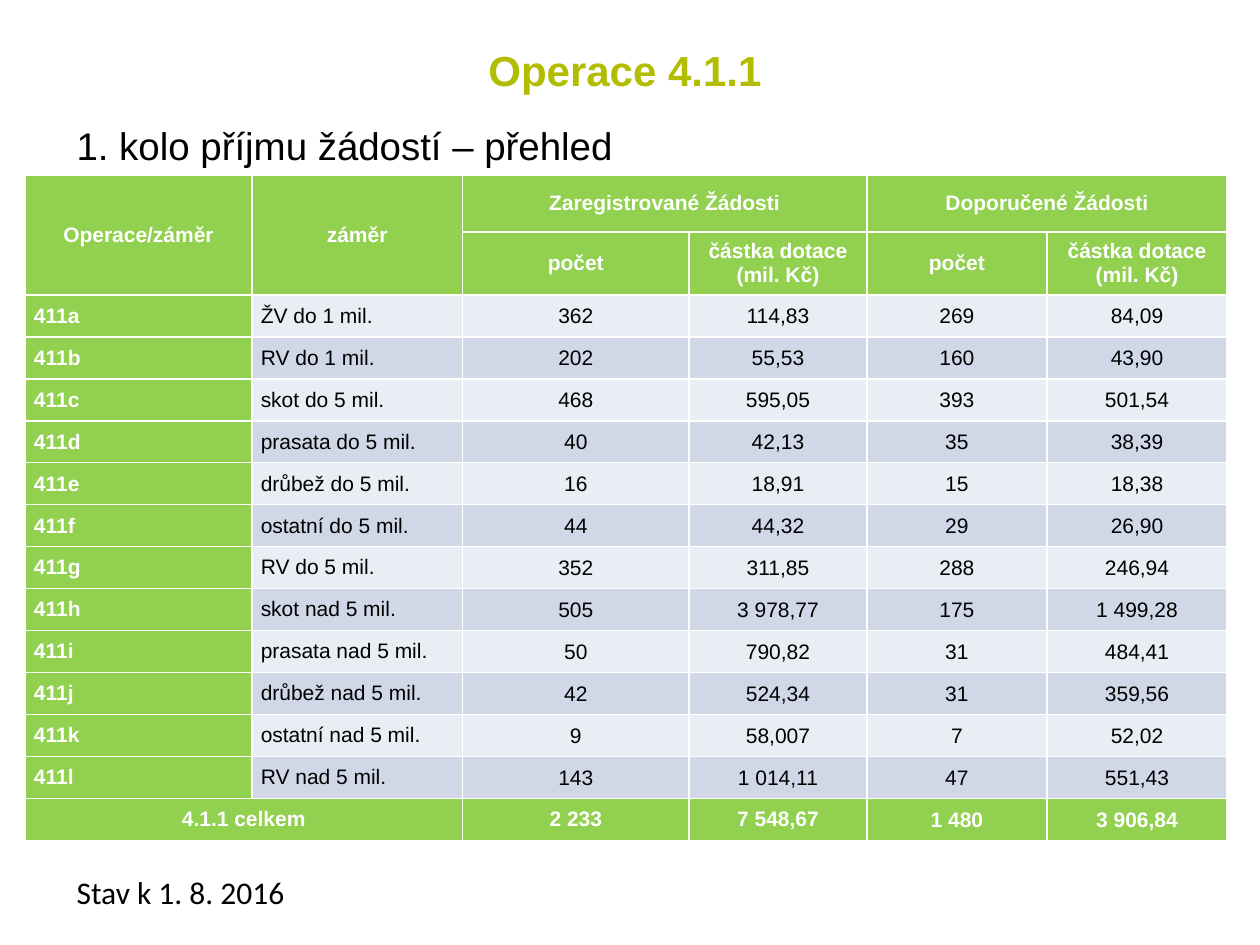
"""Build the slide with the overview of applications for operation 4.1.1."""
from lxml import etree
from pptx import Presentation
from pptx.dml.color import RGBColor
from pptx.enum.text import MSO_ANCHOR, PP_ALIGN
from pptx.oxml.ns import qn
from pptx.util import Inches, Pt

LEFT, CENTER = PP_ALIGN.LEFT, PP_ALIGN.CENTER
TOP, MIDDLE = MSO_ANCHOR.TOP, MSO_ANCHOR.MIDDLE
OLIVE = RGBColor(0xB2, 0xBC, 0x00)
GREEN = RGBColor(0x92, 0xD0, 0x50)
LIGHT = RGBColor(0xE9, 0xED, 0xF4)
DARK = RGBColor(0xD0, 0xD8, 0xE8)
WHITE = RGBColor(0xFF, 0xFF, 0xFF)
BLACK = RGBColor(0x00, 0x00, 0x00)

COLUMN_WIDTHS = [1.8, 1.67, 1.8, 1.41, 1.43, 1.43]
HEADER_HEIGHTS = [0.45, 0.5]
ROW_HEIGHT = 1 / 3
SUBHEADS = ["počet", "částka dotace (mil. Kč)"]
ROWS = [
    ["Operace/záměr", "záměr", "Zaregistrované Žádosti", "", "Doporučené Žádosti", ""],
    ["", "", *SUBHEADS, *SUBHEADS],
    ["411a", "ŽV do 1 mil.", "362", "114,83", "269", "84,09"],
    ["411b", "RV do 1 mil.", "202", "55,53", "160", "43,90"],
    ["411c", "skot do 5 mil.", "468", "595,05", "393", "501,54"],
    ["411d", "prasata do 5 mil.", "40", "42,13", "35", "38,39"],
    ["411e", "drůbež do 5 mil.", "16", "18,91", "15", "18,38"],
    ["411f", "ostatní do 5 mil.", "44", "44,32", "29", "26,90"],
    ["411g", "RV do 5 mil.", "352", "311,85", "288", "246,94"],
    ["411h", "skot nad 5 mil.", "505", "3 978,77", "175", "1 499,28"],
    ["411i", "prasata nad 5 mil.", "50", "790,82", "31", "484,41"],
    ["411j", "drůbež nad 5 mil.", "42", "524,34", "31", "359,56"],
    ["411k", "ostatní nad 5 mil.", "9", "58,007", "7", "52,02"],
    ["411l", "RV nad 5 mil.", "143", "1 014,11", "47", "551,43"],
    ["4.1.1 celkem", "", "2 233", "7 548,67", "1 480", "3 906,84"],
]
MERGES = [(0, 0, 1, 0), (0, 1, 1, 1), (0, 2, 0, 3), (0, 4, 0, 5), (14, 0, 14, 1)]


def write(frame, text, size=12, font="Arial", color=BLACK, bold=False,
          align=LEFT, anchor=MIDDLE, spacing=None):
    frame.word_wrap = True
    frame.vertical_anchor = anchor
    paragraph = frame.paragraphs[0]
    paragraph.alignment = align
    paragraph.line_spacing = spacing
    run = paragraph.add_run()
    run.text = text
    run.font.size = Pt(size)
    run.font.name = font
    run.font.bold = bold
    run.font.color.rgb = color


def add_white_borders(cell):
    properties = cell._tc.get_or_add_tcPr()
    for side in ("a:lnL", "a:lnR", "a:lnT", "a:lnB"):
        border = etree.SubElement(properties, qn(side), w=str(Pt(1)))
        fill = etree.SubElement(border, qn("a:solidFill"))
        etree.SubElement(fill, qn("a:srgbClr"), val=str(WHITE))


prs = Presentation()
prs.slide_width, prs.slide_height = Inches(10), Inches(7.5)
slide = prs.slides.add_slide(prs.slide_layouts[5])

title = slide.shapes.title
title.left, title.top = Inches(0.75), Inches(0.13)
title.width, title.height = Inches(8.42), Inches(0.85)
write(title.text_frame, "Operace 4.1.1", size=24, color=OLIVE, bold=True, align=CENTER)

subtitle = slide.shapes.add_textbox(Inches(0.51), Inches(0.92), Inches(8.9), Inches(0.55))
write(subtitle.text_frame, "1. kolo příjmu žádostí – přehled", size=22, anchor=TOP)

status = slide.shapes.add_textbox(Inches(0.51), Inches(6.88), Inches(8.9), Inches(0.4))
write(status.text_frame, "Stav k 1. 8. 2016", size=18, font="Calibri", anchor=TOP)

heights = HEADER_HEIGHTS + [ROW_HEIGHT] * (len(ROWS) - len(HEADER_HEIGHTS))
overview = slide.shapes.add_table(
    len(ROWS), len(COLUMN_WIDTHS), Inches(0.2), Inches(1.39),
    Inches(sum(COLUMN_WIDTHS)), Inches(sum(heights))).table
overview.horz_banding = False
for column, width in zip(overview.columns, COLUMN_WIDTHS):
    column.width = Inches(width)
for row, height in zip(overview.rows, heights):
    row.height = Inches(height)
for top, left, bottom, right in MERGES:
    overview.cell(top, left).merge(overview.cell(bottom, right))

for r, values in enumerate(ROWS):
    is_data = len(HEADER_HEIGHTS) <= r < len(ROWS) - 1
    for c, value in enumerate(values):
        cell = overview.cell(r, c)
        is_green = not is_data or c == 0
        is_tight = r >= len(HEADER_HEIGHTS) and c >= 4
        add_white_borders(cell)
        cell.fill.solid()
        cell.fill.fore_color.rgb = GREEN if is_green else (LIGHT, DARK)[r % 2]
        cell.margin_left = cell.margin_right = Inches(0.01 if is_tight else 0.07)
        cell.margin_top = Inches(0.01 if is_tight else 0)
        cell.margin_bottom = 0
        cell.vertical_anchor = MIDDLE
        if value:
            write(cell.text_frame, value, color=WHITE if is_green else BLACK,
                  bold=is_green, align=LEFT if is_data and c < 2 else CENTER,
                  spacing=1.06 if is_data and c in (2, 3) else None)

prs.save("out.pptx")
